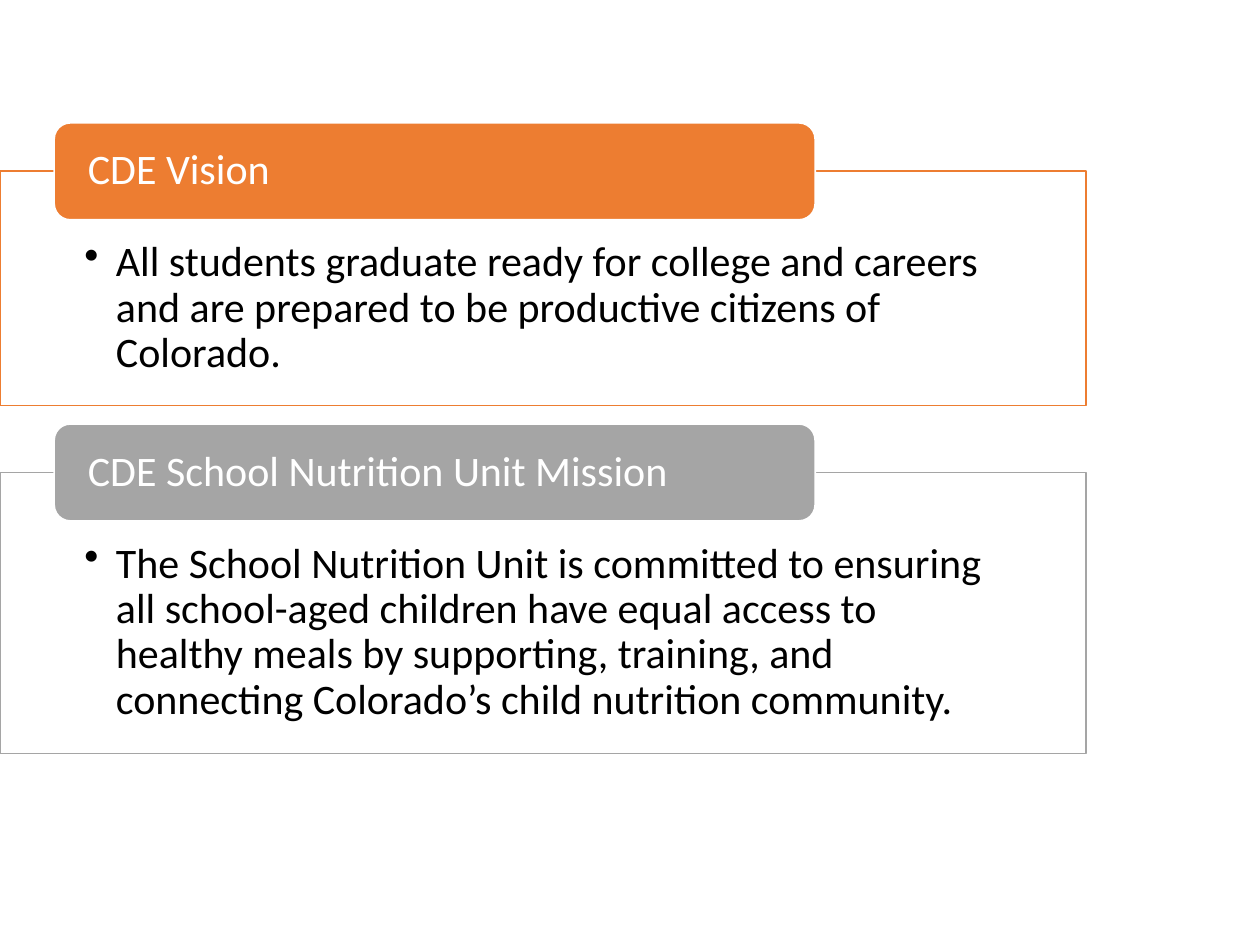
"""Build a slide with the vision and mission statements in two labelled panels."""
from dataclasses import dataclass

import pptx
import pptx.dml.color
import pptx.enum.shapes
import pptx.enum.text
import pptx.oxml.ns
import pptx.util
from lxml import etree

Inches = pptx.util.Inches
Shapes = pptx.enum.shapes.MSO_SHAPE
Anchor = pptx.enum.text.MSO_ANCHOR
qn = pptx.oxml.ns.qn

COLORS = {"white": "FFFFFF", "black": "000000", "orange": "ED7D31", "gray": "A5A5A5"}
PANEL_WIDTH = 8.62
LABEL_LEFT, LABEL_WIDTH, LABEL_HEIGHT = 0.43, 6.04, 0.77


@dataclass
class Statement:
    heading: str
    body: str
    color: str
    top: float
    height: float


STATEMENTS = [
    Statement(
        "CDE Vision",
        "All students graduate ready for college and careers and are prepared "
        "to be productive citizens of Colorado.",
        "orange", 1.36, 1.86,
    ),
    Statement(
        "CDE School Nutrition Unit Mission",
        "The School Nutrition Unit is committed to ensuring all school-aged "
        "children have equal access to healthy meals by supporting, training, "
        "and connecting Colorado’s child nutrition community.",
        "gray", 3.75, 2.23,
    ),
]


def rgb(name: str) -> pptx.dml.color.RGBColor:
    """Return the named colour."""
    return pptx.dml.color.RGBColor.from_string(COLORS[name])


def add_box(page, kind, left: float, top: float, width: float, height: float,
            fill: str, line: str):
    """Add a filled, outlined shape without a shadow."""
    box = page.shapes.add_shape(
        kind, Inches(left), Inches(top), Inches(width), Inches(height))
    box.shadow.inherit = False
    box.fill.solid()
    box.fill.fore_color.rgb = rgb(fill)
    box.line.color.rgb = rgb(line)
    box.line.width = pptx.util.Pt(1)
    return box


def set_opacity(box, percent: int) -> None:
    """Make the fill of a shape partly transparent."""
    color = box.fill._xPr.find(qn("a:solidFill")).find(qn("a:srgbClr"))
    etree.SubElement(color, qn("a:alpha"), val=str(percent * 1000))


def write_text(box, text: str, *, color: str, anchor, margins: tuple,
               bullet: bool = False) -> None:
    """Write one left-aligned paragraph, with a bullet if asked for."""
    frame = box.text_frame
    frame.word_wrap = True
    frame.vertical_anchor = anchor
    (frame.margin_left, frame.margin_top,
     frame.margin_right, frame.margin_bottom) = map(Inches, margins)
    para = frame.paragraphs[0]
    para.alignment = pptx.enum.text.PP_ALIGN.LEFT
    para.line_spacing = 0.9
    if bullet:
        para.level = 1
        properties = para._p.get_or_add_pPr()
        properties.set("marL", str(Inches(0.25)))
        properties.set("indent", str(Inches(-0.25)))
        etree.SubElement(properties, qn("a:buChar"), char="•")
    span = para.add_run()
    span.text = text
    span.font.name = "Calibri"
    span.font.size = pptx.util.Pt(24)
    span.font.color.rgb = rgb(color)


def add_statement(page, item: Statement) -> None:
    """Draw a panel with its label centred on the top edge."""
    panel = add_box(page, Shapes.RECTANGLE, 0, item.top, PANEL_WIDTH, item.height,
                    "white", item.color)
    set_opacity(panel, 90)
    write_text(panel, item.body, color="black", anchor=Anchor.TOP,
               margins=(0.67, 0.55, 0.67, 0.19), bullet=True)
    label = add_box(page, Shapes.ROUNDED_RECTANGLE, LABEL_LEFT,
                    item.top - LABEL_HEIGHT / 2, LABEL_WIDTH, LABEL_HEIGHT,
                    item.color, "white")
    write_text(label, item.heading, color="white", anchor=Anchor.MIDDLE,
               margins=(0.23, 0, 0.23, 0))


def main() -> None:
    """Build and save the deck."""
    deck = pptx.Presentation()
    deck.slide_width, deck.slide_height = Inches(10), Inches(7.5)
    page = deck.slides.add_slide(deck.slide_layouts[6])
    for item in STATEMENTS:
        add_statement(page, item)
    deck.save("out.pptx")


if __name__ == "__main__":
    main()
